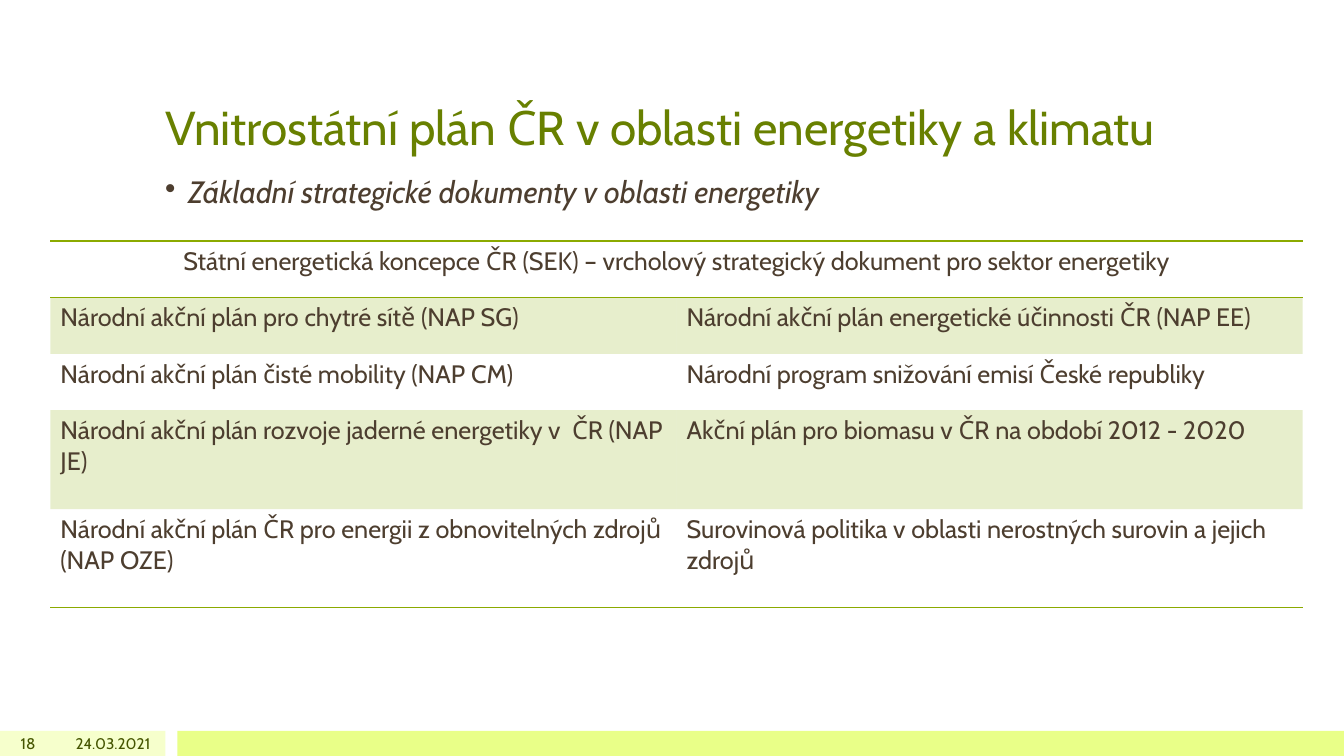
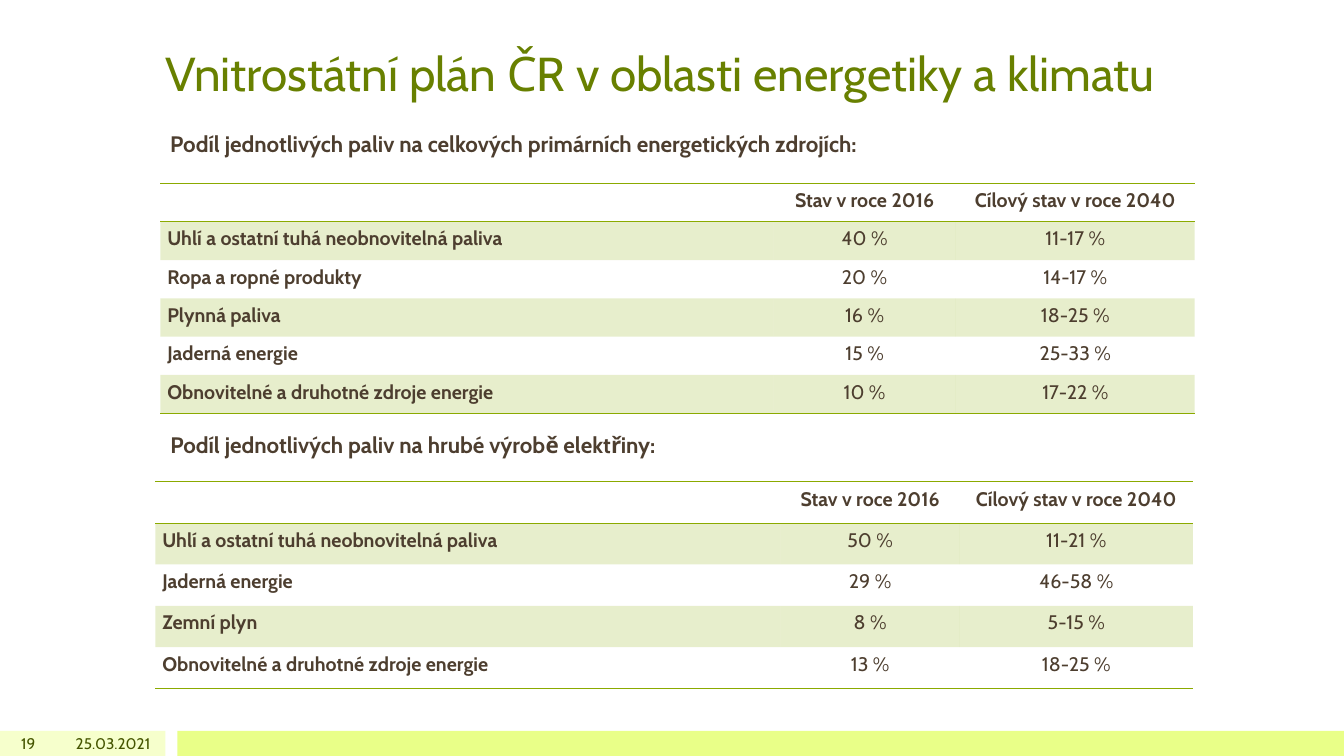
from lxml import etree
from pptx import Presentation
from pptx.dml.color import RGBColor
from pptx.enum import shapes, text
from pptx.oxml import ns
from pptx.util import Inches, Pt

FONT = "Cabin"
COLORS = {
    "title": "688000",
    "body": "4D3E2F",
    "footer": "455500",
    "accent": "8BAA00",
    "pale_band": "F6FFCC",
    "bright_band": "E9FF88",
}
TITLE = "Vnitrostátní plán ČR v oblasti energetiky a klimatu"
NO_GRID_STYLE = "{2D5ABB26-0587-4C30-8999-92F81FD0307C}"
ALIGN = text.PP_ALIGN
ANCHOR = text.MSO_ANCHOR

STRATEGY = "Státní energetická koncepce ČR (SEK) – vrcholový strategický dokument pro sektor energetiky"
PLANS = [
    ("Národní akční plán pro chytré sítě (NAP SG)",
     "Národní akční plán energetické účinnosti ČR (NAP EE)"),
    ("Národní akční plán čisté mobility (NAP CM)",
     "Národní program snižování emisí České republiky"),
    ("Národní akční plán rozvoje jaderné energetiky v  ČR (NAP JE)",
     "Akční plán pro biomasu v ČR na období 2012 - 2020"),
    ("Národní akční plán ČR pro energii z obnovitelných zdrojů (NAP OZE)",
     "Surovinová politika v oblasti nerostných surovin a jejich zdrojů"),
]
SHARE_HEADER = ("", "Stav v roce 2016", "Cílový stav v roce 2040")
PRIMARY_SHARES = [
    ("Uhlí a ostatní tuhá neobnovitelná paliva", "40 %", "11-17 %"),
    ("Ropa a ropné produkty", "20 %", "14-17 %"),
    ("Plynná paliva", "16 %", "18-25 %"),
    ("Jaderná energie", "15 %", "25-33 %"),
    ("Obnovitelné a druhotné zdroje energie", "10 %", "17-22 %"),
]
ELECTRICITY_SHARES = [
    ("Uhlí a ostatní tuhá neobnovitelná paliva", "50 %", "11-21 %"),
    ("Jaderná energie", "29 %", "46-58 %"),
    ("Zemní plyn", "8 %", "5-15 %"),
    ("Obnovitelné a druhotné zdroje energie", "13 %", "18-25 %"),
]


def color(name):
    """Return a palette colour."""
    return RGBColor.from_string(COLORS[name])


def write(frame, words, size, name="body", align=ALIGN.LEFT, bold=False, italic=False):
    """Write one styled run and return its paragraph."""
    para = frame.paragraphs[0]
    para.alignment = align
    span = para.add_run()
    span.text = words
    font = span.font
    font.name, font.size, font.bold, font.italic = FONT, Pt(size), bold, italic
    font.color.rgb = color(name)
    return para


def add_text(page, box, words, size, anchor=ANCHOR.TOP, **style):
    """Add a wrapping text box and return its paragraph."""
    frame = page.shapes.add_textbox(*map(Inches, box)).text_frame
    frame.word_wrap = True
    frame.vertical_anchor = anchor
    return write(frame, words, size, **style)


def add_bullet(page, box, words):
    """Add an italic bulleted line."""
    para = add_text(page, box, words, 22, italic=True)
    para.line_spacing = 0.9
    para.space_before = Pt(11)
    props = para._p.get_or_add_pPr()
    props.set("marL", str(Inches(0.23)))
    props.set("indent", str(-Inches(0.23)))
    etree.SubElement(props, ns.qn("a:buChar")).set("char", "•")


def add_band(page, box, name):
    """Add a plain coloured band."""
    band = page.shapes.add_shape(shapes.MSO_SHAPE.RECTANGLE, *map(Inches, box))
    band.shadow.inherit = False
    band.fill.solid()
    band.fill.fore_color.rgb = color(name)
    band.line.fill.background()


def add_page(deck, title_box, number, date):
    """Add a page with its title and footer."""
    page = deck.slides.add_slide(deck.slide_layouts[6])
    top, height = 7.25, 0.25
    add_band(page, (0, top, 1.64, height), "pale_band")
    add_band(page, (1.76, top, 11.57, height), "bright_band")
    add_text(page, title_box, TITLE, 34, ANCHOR.BOTTOM, name="title")
    for left, width, words in ((0, 0.45, number), (0.5, 1.09, date)):
        add_text(page, (left, top, width, height), words, 11, ANCHOR.MIDDLE,
                 name="footer", align=ALIGN.RIGHT)
    return page


def style_cell(cell, banded, ruled):
    """Set the tint and the ruled sides of a cell."""
    props = cell._tc.get_or_add_tcPr()
    for side in "LRTB":
        line = etree.SubElement(props, ns.qn(f"a:ln{side}"))
        if side in ruled:
            line.set("w", str(Pt(1)))
            fill = etree.SubElement(line, ns.qn("a:solidFill"))
            etree.SubElement(fill, ns.qn("a:srgbClr")).set("val", COLORS["accent"])
        else:
            etree.SubElement(line, ns.qn("a:noFill"))
    if banded:
        cell.fill.solid()
        cell.fill.fore_color.rgb = color("accent")
        tint = props.find(ns.qn("a:solidFill"))[0]
        etree.SubElement(tint, ns.qn("a:alpha")).set("val", "20000")
    else:
        cell.fill.background()


def add_grid(page, corner, widths, heights):
    """Add a table with rules round its header and tinted odd rows."""
    frame = page.shapes.add_table(len(heights), len(widths), *map(
        Inches, (*corner, sum(widths), sum(heights))))
    table = frame.table
    table.first_row = table.horz_banding = False
    table._tbl.tblPr.find(ns.qn("a:tableStyleId")).text = NO_GRID_STYLE
    for column, width in zip(table.columns, widths):
        column.width = Inches(width)
    last = len(heights) - 1
    for index, height in enumerate(heights):
        table.rows[index].height = Inches(height)
        ruled = {0: "TB", 1: "T", last: "B"}.get(index, "")
        for cell in table.rows[index].cells:
            style_cell(cell, index % 2 == 1, ruled)
    return table


def add_plan_table(page, corner):
    """Add the strategy heading above its two columns of plans."""
    table = add_grid(page, corner, [6.21] * 2, [0.56] * 3 + [0.98] * 2)
    heading = table.cell(0, 0)
    heading.merge(table.cell(0, 1))
    write(heading.text_frame, STRATEGY, 18, align=ALIGN.CENTER)
    for row, plans in enumerate(PLANS, 1):
        for column, plan in enumerate(plans):
            write(table.cell(row, column).text_frame, plan, 18)


def add_share_table(page, corner, widths, height, shares):
    """Add a table of fuel shares."""
    rows = [SHARE_HEADER, *shares]
    table = add_grid(page, corner, widths, [height] * len(rows))
    for row, values in enumerate(rows):
        for column, value in enumerate(values):
            cell = table.cell(row, column)
            cell.margin_left = cell.margin_right = Inches(0.07)
            cell.margin_top = cell.margin_bottom = 0
            para = write(cell.text_frame, value, 14, bold=row == 0 or column == 0,
                         align=ALIGN.CENTER if column else ALIGN.JUSTIFY)
            para.line_spacing = 1.22
            para.space_before = para.space_after = Pt(3)


def build_strategy_page(deck):
    """Build the page of strategic documents."""
    page = add_page(deck, (1.54, 0.3, 10.25, 1.29), "18", "24.03.2021")
    add_bullet(page, (1.54, 1.71, 10.25, 0.6),
               "Základní strategické dokumenty v oblasti energetiky")
    add_plan_table(page, (0.5, 2.39))


def build_share_page(deck):
    """Build the page of fuel shares."""
    page = add_page(deck, (1.54, 0.3, 10.25, 0.75), "19", "25.03.2021")
    add_text(page, (1.59, 1.24, 9.03, 0.37),
             "Podíl jednotlivých paliv na celkových primárních energetických zdrojích:",
             16, bold=True)
    add_share_table(page, (1.59, 1.82), (6.08, 1.81, 2.37), 0.38, PRIMARY_SHARES)
    add_text(page, (1.59, 4.23, 8.48, 0.37),
             "Podíl jednotlivých paliv na hrubé výrobě elektřiny:", 16, bold=True)
    add_share_table(page, (1.54, 4.78), (6.2, 1.78, 2.31), 0.41, ELECTRICITY_SHARES)


def main():
    """Build and save the deck."""
    deck = Presentation()
    deck.slide_width, deck.slide_height = Inches(13.33), Inches(7.5)
    build_strategy_page(deck)
    build_share_page(deck)
    deck.save("out.pptx")


if __name__ == "__main__":
    main()
